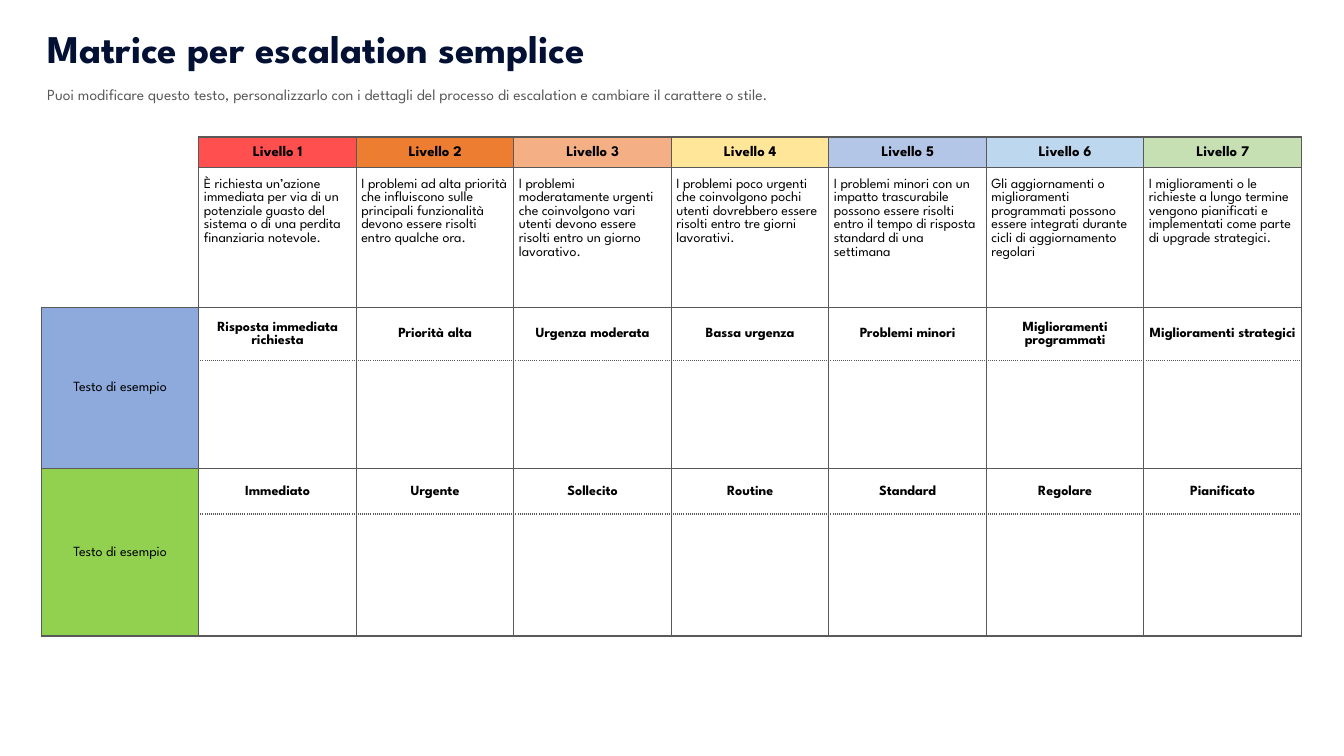
from lxml.etree import SubElement
from pptx import Presentation
from pptx.dml.color import RGBColor
from pptx.enum.text import MSO_ANCHOR, MSO_AUTO_SIZE, PP_ALIGN
from pptx.oxml.ns import qn
from pptx.util import Inches, Pt

HEADING_FONT = "League Spartan"
NAVY = RGBColor(0x01, 0x10, 0x33)
GRAY = RGBColor(0x59, 0x59, 0x59)
BLACK = RGBColor(0x00, 0x00, 0x00)
BLUE = RGBColor(0x8E, 0xA9, 0xDB)
GREEN = RGBColor(0x92, 0xD0, 0x50)
LEVEL_COLORS = [
    RGBColor(0xFF, 0x4F, 0x4F),
    RGBColor(0xED, 0x7D, 0x31),
    RGBColor(0xF4, 0xB0, 0x84),
    RGBColor(0xFF, 0xE6, 0x99),
    RGBColor(0xB4, 0xC6, 0xE7),
    RGBColor(0xBD, 0xD7, 0xEE),
    RGBColor(0xC6, 0xE0, 0xB4),
]
DESCRIPTIONS = [
    "È richiesta un’azione immediata per via di un potenziale guasto del sistema o di una perdita finanziaria notevole.",
    "I problemi ad alta priorità che influiscono sulle principali funzionalità devono essere risolti entro qualche ora.",
    "I problemi moderatamente urgenti che coinvolgono vari utenti devono essere risolti entro un giorno lavorativo.",
    "I problemi poco urgenti che coinvolgono pochi utenti dovrebbero essere risolti entro tre giorni lavorativi.",
    "I problemi minori con un impatto trascurabile possono essere risolti entro il tempo di risposta standard di una settimana",
    "Gli aggiornamenti o miglioramenti programmati possono essere integrati durante cicli di aggiornamento regolari",
    "I miglioramenti o le richieste a lungo termine vengono pianificati e implementati come parte di upgrade strategici.",
]
PRIORITIES = [
    "Risposta immediata richiesta",
    "Priorità alta",
    "Urgenza moderata",
    "Bassa urgenza",
    "Problemi minori",
    "Miglioramenti programmati",
    "Miglioramenti strategici",
]
TIMINGS = ["Immediato", "Urgente", "Sollecito", "Routine", "Standard", "Regolare", "Pianificato"]
GROUPS = {2: (BLUE, PRIORITIES), 4: (GREEN, TIMINGS)}
ROW_HEIGHTS = [0.3, 1.39, 0.53, 1.07, 0.45, 1.21]
TABLE_WIDTH = 12.5
COLUMN_COUNT = len(DESCRIPTIONS) + 1


def add_run(paragraph, text, size, color, bold=False, font=HEADING_FONT):
    """Append one formatted run to a paragraph."""
    run = paragraph.add_run()
    run.text = text
    run.font.name = font
    run.font.size = Pt(size)
    run.font.bold = bold
    run.font.color.rgb = color


def add_title(slide, text):
    """Place and format the title placeholder."""
    title = slide.shapes.title
    title.left, title.top = Inches(0.37), Inches(0.19)
    title.width, title.height = Inches(9.43), Inches(0.57)
    frame = title.text_frame
    frame.word_wrap = True
    frame.auto_size = MSO_AUTO_SIZE.SHAPE_TO_FIT_TEXT
    frame.vertical_anchor = MSO_ANCHOR.TOP
    paragraph = frame.paragraphs[0]
    paragraph.alignment = PP_ALIGN.LEFT
    add_run(paragraph, text, 28, NAVY, bold=True)


def add_subtitle(slide, text):
    """Add the explanatory line under the title."""
    box = slide.shapes.add_textbox(Inches(0.37), Inches(0.7), Inches(10.84), Inches(0.4))
    frame = box.text_frame
    frame.word_wrap = True
    frame.auto_size = MSO_AUTO_SIZE.SHAPE_TO_FIT_TEXT
    paragraph = frame.paragraphs[0]
    add_run(paragraph, text, 11, GRAY)
    add_run(paragraph, " ", 18, BLACK, font="Roboto")


def set_borders(cell, left="solid", right="solid", top="solid", bottom="solid"):
    """Draw the four cell borders, leaving out a side whose dash is None."""
    properties = cell._tc.get_or_add_tcPr()
    for tag, dash in (("lnL", left), ("lnR", right), ("lnT", top), ("lnB", bottom)):
        line = SubElement(properties, qn(f"a:{tag}"), w=str(Pt(1)))
        if dash is None:
            SubElement(line, qn("a:noFill"))
            continue
        fill = SubElement(line, qn("a:solidFill"))
        SubElement(fill, qn("a:srgbClr"), val=str(GRAY))
        SubElement(line, qn("a:prstDash"), val="sysDot" if dash == "dot" else dash)


def format_cell(cell, color=None, **borders):
    """Set the margins, borders and fill of a cell."""
    cell.margin_left = cell.margin_right = Inches(0.05)
    cell.margin_top = cell.margin_bottom = 0
    set_borders(cell, **borders)
    if color is None:
        cell.fill.background()
    else:
        cell.fill.solid()
        cell.fill.fore_color.rgb = color


def format_empty_cell(cell, **borders):
    """Format a cell without text so that it does not stretch its row."""
    format_cell(cell, **borders)
    SubElement(cell.text_frame.paragraphs[0]._p, qn("a:endParaRPr"), sz=str(1000))


def fill_label(cell, text, size=10, bold=True, color=None, **borders):
    """Write a centred label in a cell."""
    format_cell(cell, color, **borders)
    cell.vertical_anchor = MSO_ANCHOR.MIDDLE
    paragraph = cell.text_frame.paragraphs[0]
    paragraph.alignment = PP_ALIGN.CENTER
    paragraph.line_spacing = 1.07
    add_run(paragraph, text, size, BLACK, bold)


def fill_description(cell, text):
    """Write a level description in a cell."""
    format_cell(cell)
    cell.margin_top = Inches(0.1)
    paragraph = cell.text_frame.paragraphs[0]
    paragraph.line_spacing = 1.07
    paragraph.space_before = Pt(12)
    add_run(paragraph, text, 10, BLACK)


def fill_group(table, row, color, labels):
    """Fill a merged row heading, its labels and the empty row below."""
    heading, lower = table.cell(row, 0), table.cell(row + 1, 0)
    heading.merge(lower)
    fill_label(heading, "Testo di esempio", bold=False, color=color)
    format_empty_cell(lower, color=color)
    for column, label in enumerate(labels, start=1):
        fill_label(table.cell(row, column), label, bottom="dot")
        format_empty_cell(table.cell(row + 1, column), top="dot")


def add_matrix(slide):
    """Add the escalation table."""
    frame = slide.shapes.add_table(
        len(ROW_HEIGHTS), COLUMN_COUNT, Inches(0.41), Inches(1.36),
        Inches(TABLE_WIDTH), Inches(sum(ROW_HEIGHTS)),
    )
    table = frame.table
    table.first_row = table.horz_banding = False
    for column in table.columns:
        column.width = Inches(TABLE_WIDTH / COLUMN_COUNT)
    for row, height in zip(table.rows, ROW_HEIGHTS):
        row.height = Inches(height)
    format_empty_cell(table.cell(0, 0), left=None, top=None, bottom=None)
    format_empty_cell(table.cell(1, 0), left=None, top=None)
    for level, (color, description) in enumerate(zip(LEVEL_COLORS, DESCRIPTIONS), start=1):
        fill_label(table.cell(0, level), f"Livello {level}", size=10.5, color=color)
        fill_description(table.cell(1, level), description)
    for row, (color, labels) in GROUPS.items():
        fill_group(table, row, color, labels)


def main():
    """Build and save the escalation matrix slide."""
    presentation = Presentation()
    presentation.slide_width, presentation.slide_height = Inches(13.33), Inches(7.5)
    slide = presentation.slides.add_slide(presentation.slide_layouts[5])
    add_title(slide, "Matrice per escalation semplice")
    add_subtitle(
        slide,
        "Puoi modificare questo testo, personalizzarlo con i dettagli del processo "
        "di escalation e cambiare il carattere o stile.",
    )
    add_matrix(slide)
    presentation.save("out.pptx")


if __name__ == "__main__":
    main()
